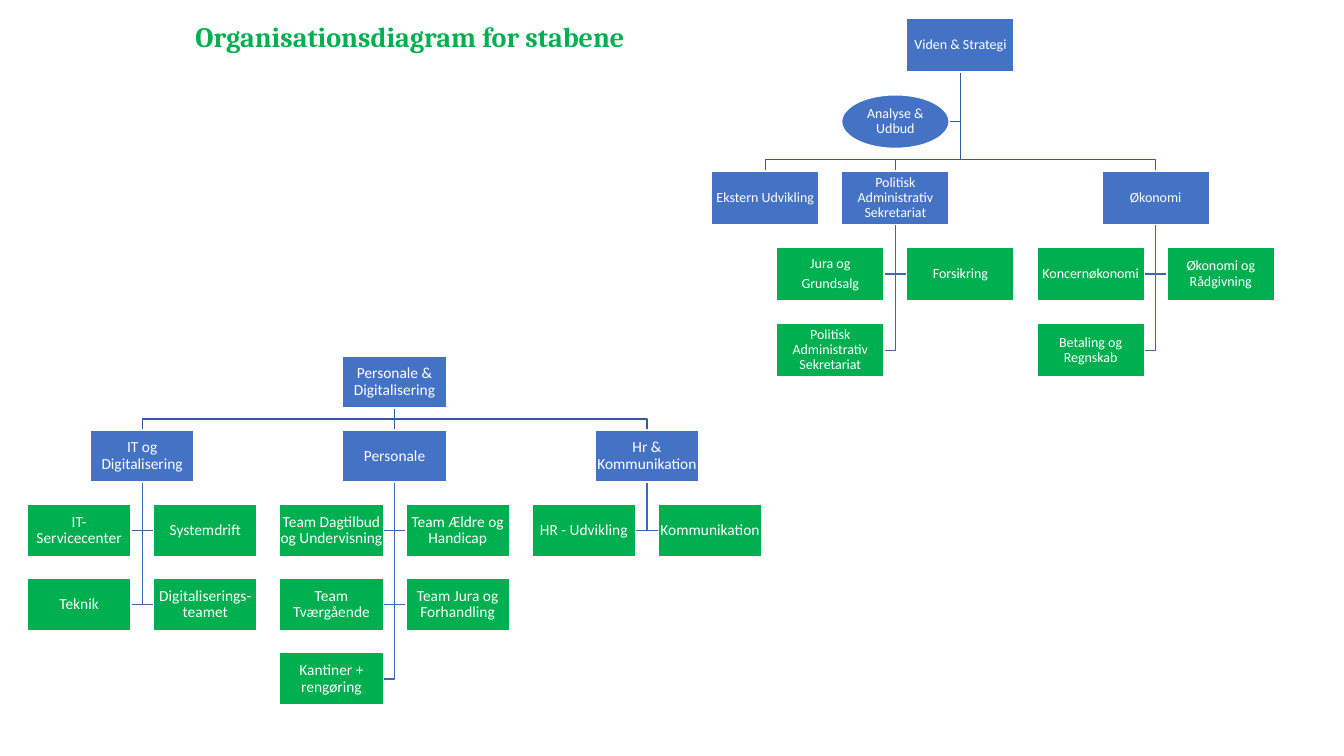
from pptx import Presentation
from pptx.dml.color import RGBColor
from pptx.enum.shapes import MSO_CONNECTOR, MSO_SHAPE
from pptx.enum.text import MSO_ANCHOR, PP_ALIGN
from pptx.oxml import parse_xml
from pptx.oxml.ns import nsdecls
from pptx.util import Cm, Pt

RECT, OVAL = MSO_SHAPE.RECTANGLE, MSO_SHAPE.OVAL
LINE = MSO_CONNECTOR.STRAIGHT
TOP, MIDDLE = MSO_ANCHOR.TOP, MSO_ANCHOR.MIDDLE
LEFT, CENTER = PP_ALIGN.LEFT, PP_ALIGN.CENTER
COLORS = {"unit": "4472C4", "team": "00B050", "white": "FFFFFF",
          "trunk": "365B9D", "branch": "3E67B2"}


def color(name):
    return RGBColor.from_string(COLORS[name])


class Chart:
    """An organisation chart on a grid of columns and rows, in cm."""

    def __init__(self, slide, left, top, width, height, across, down, size):
        self.slide, self.size = slide, size
        self.left, self.top = left, top
        self.width, self.height = width, height
        self.across, self.down = across, down
        self.gap = down - height

    def mid(self, col):
        return self.left + col * self.across + self.width / 2

    def row_top(self, row):
        return self.top + row * self.down

    def link(self, points, tone):
        spots = [(Cm(x), Cm(y)) for x, y in points]
        shapes = self.slide.shapes
        if len({x for x, _ in spots}) == 1:
            line = shapes.add_connector(LINE, *spots[0], *spots[-1])
            line._element.spPr.append(
                parse_xml(f"<a:effectLst {nsdecls('a')}/>"))
        else:
            path = shapes.build_freeform(*spots[0])
            path.add_line_segments(spots[1:], close=False)
            line = path.convert_to_shape()
            line.fill.background()
            line.shadow.inherit = False
        line.line.color.rgb = color(tone)
        line.line.width = Pt(1)

    def trunk(self, root, head, row):
        x, end, y = self.mid(root), self.mid(head), self.row_top(row)
        bend = y - self.gap / 2
        start = (x, self.top + self.height)
        turn = [] if root == head else [(x, bend), (end, bend)]
        self.link([start, *turn, (end, y)], "trunk")

    def branch(self, col, row, side, target, tone="branch"):
        x = self.mid(col)
        y = self.row_top(target) + self.height / 2
        self.link([(x, self.row_top(row) + self.height), (x, y),
                   (x + side * (self.across - self.width) / 2, y)], tone)

    def box(self, text, col, row, fill, kind=RECT):
        box = self.slide.shapes.add_shape(
            kind, Cm(self.mid(col) - self.width / 2), Cm(self.row_top(row)),
            Cm(self.width), Cm(self.height))
        box.shadow.inherit = False
        box.fill.solid()
        box.fill.fore_color.rgb = color(fill)
        box.line.color.rgb = color("white")
        box.line.width = Pt(1)
        frame = box.text_frame
        frame.word_wrap = True
        frame.vertical_anchor = MIDDLE
        frame.margin_left = frame.margin_right = Cm(0.01)
        frame.margin_top = frame.margin_bottom = Cm(0.01)
        frame.text = text
        for para in frame.paragraphs:
            para.alignment = CENTER
            para.line_spacing = 0.9
            para.space_after = Pt(self.size * 0.35)
            para.font.name, para.font.size = "Calibri", Pt(self.size)
            para.font.color.rgb = color("white")

    def draw(self, name, root, row, units, aide=None):
        # Lines go behind the boxes
        boxes = [(name, root, 0, "unit")]
        for unit, col, teams in units:
            self.trunk(root, col, row)
            boxes.append((unit, col, row, "unit"))
            for i, team in enumerate(teams):
                side = 1 if i % 2 else -1
                target = row + 1 + i // 2
                self.branch(col, row, side, target)
                boxes.append((team, col + side / 2, target, "team"))
        if aide:
            self.branch(root, 0, -1, 1, "trunk")
            boxes.append((aide, root - 0.5, 1, "unit", OVAL))
        for box in boxes:
            self.box(*box)


def add_title(slide, text):
    title = slide.shapes.title
    title.left, title.top = Cm(4.67), Cm(0.46)
    title.width, title.height = Cm(12.57), Cm(1.24)
    frame = title.text_frame
    frame.word_wrap = True
    frame.vertical_anchor = TOP
    frame.text = text
    para = frame.paragraphs[0]
    para.alignment, para.line_spacing = LEFT, 0.9
    para.font.name, para.font.size = "Cambria", Pt(20)
    para.font.bold = True
    para.font.color.rgb = color("team")


def main():
    deck = Presentation()
    deck.slide_width, deck.slide_height = Cm(33.87), Cm(19.05)
    slide = deck.slides.add_slide(deck.slide_layouts[5])
    add_title(slide, "Organisationsdiagram for stabene")

    # Staff and digitalisation
    staff = Chart(slide, 0.69, 8.97, 2.61, 1.31, 3.18, 1.87, 11)
    staff.draw("Personale & Digitalisering", 2.5, 1, [
        ("IT og Digitalisering", 0.5,
         ["IT- Servicecenter", "Systemdrift", "Teknik",
          "Digitaliserings-teamet"]),
        ("Personale", 2.5,
         ["Team Dagtilbud og Undervisning", "Team Ældre og Handicap",
          "Team Tværgående", "Team Jura og Forhandling",
          "Kantiner + rengøring"]),
        ("Hr & Kommunikation", 4.5, ["HR - Udvikling", "Kommunikation"]),
    ])

    # Knowledge and strategy
    plan = Chart(slide, 17.93, 0.47, 2.71, 1.35, 3.28, 1.92, 10)
    plan.draw("Viden & Strategi", 1.5, 2, [
        ("Ekstern Udvikling", 0, []),
        ("Politisk Administrativ Sekretariat", 1,
         ["Jura og\nGrundsalg", "Forsikring",
          "Politisk Administrativ Sekretariat"]),
        ("Økonomi", 3,
         ["Koncernøkonomi", "Økonomi og Rådgivning",
          "Betaling og Regnskab"]),
    ], aide="Analyse & Udbud")

    deck.save("out.pptx")


if __name__ == "__main__":
    main()
